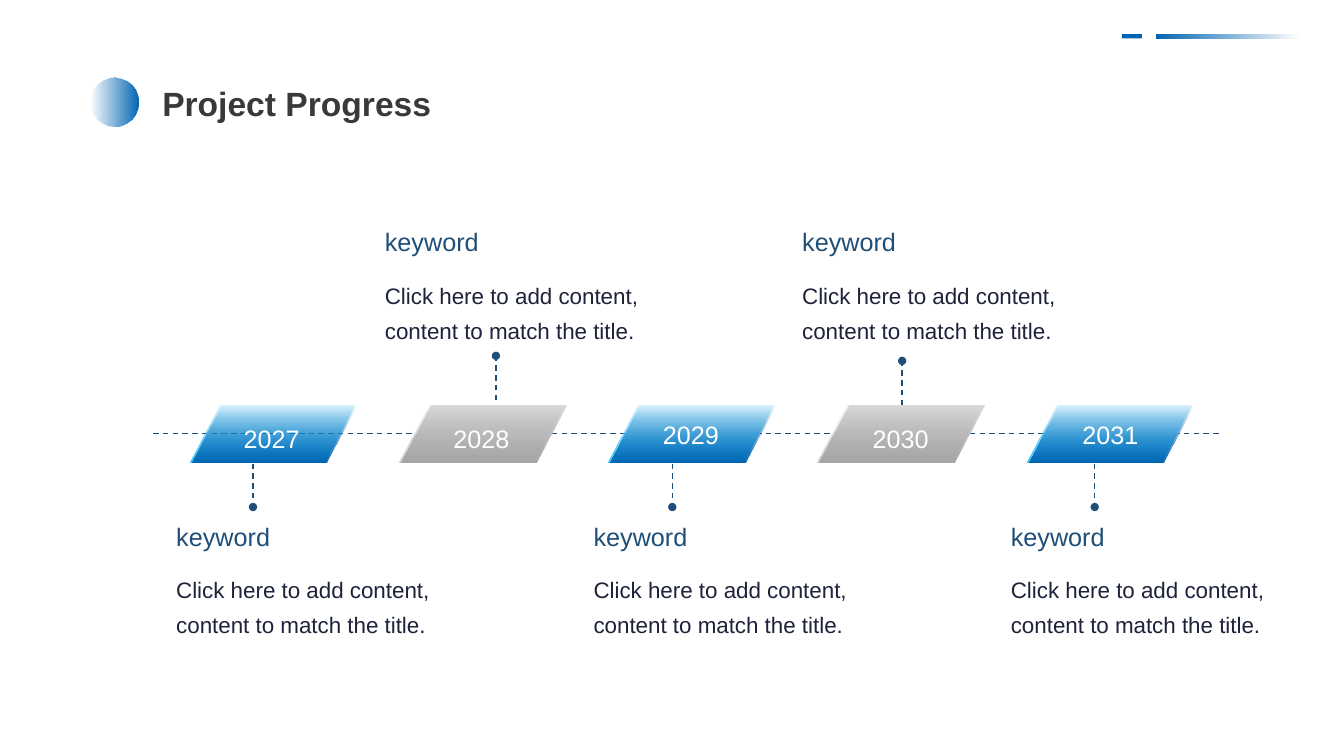
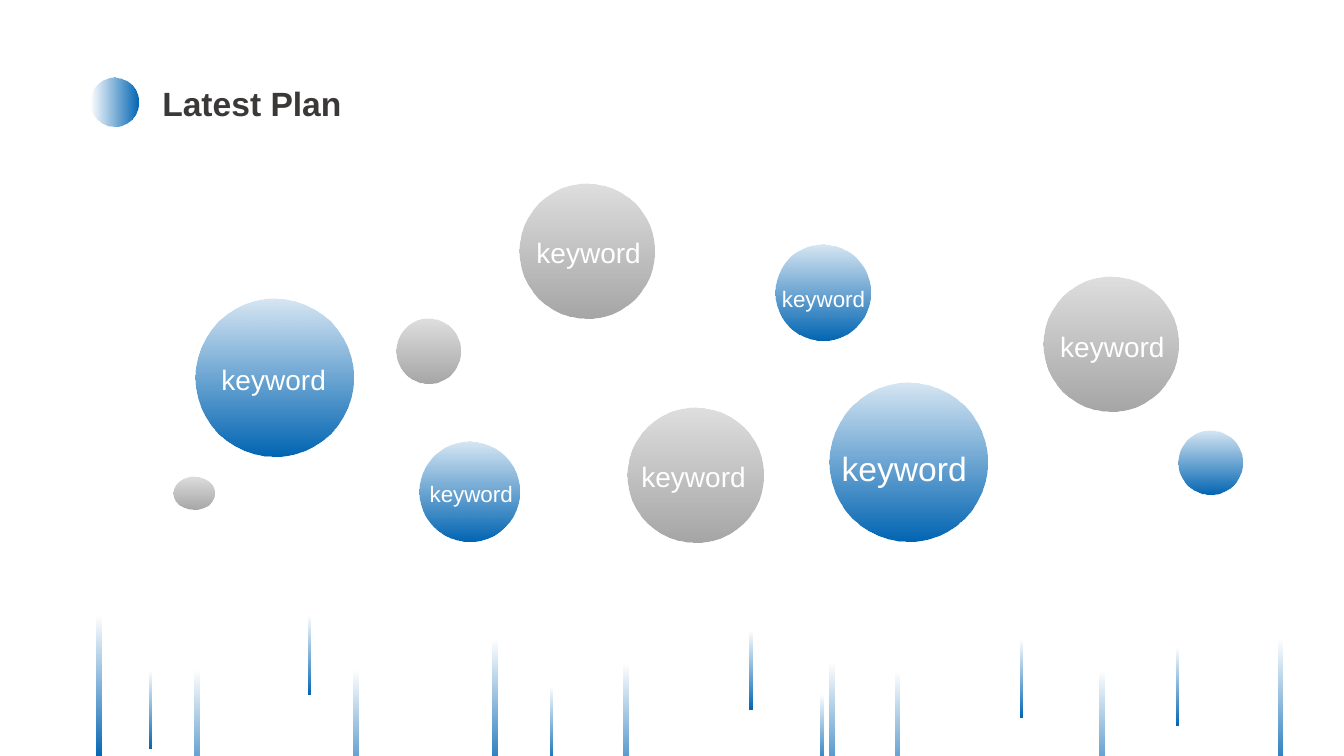
"""Build a timeline slide and a bubble slide on a fine square grid."""
from dataclasses import dataclass

from pptx import Presentation
from pptx.dml.color import RGBColor
from pptx.enum.dml import MSO_LINE
from pptx.enum.shapes import MSO_CONNECTOR as Connector, MSO_SHAPE as Preset
from pptx.enum.text import MSO_ANCHOR as Anchor, MSO_AUTO_SIZE as AutoSize, PP_ALIGN as Align
from pptx.oxml.ns import qn
from pptx.oxml.xmlchemy import OxmlElement
from pptx.util import Inches, Pt

COLUMNS, ROWS = 133.33, 75
CELL = Inches(0.1)
DOWN, RIGHT, LEFT = 270, 0, 180


@dataclass(frozen=True)
class Blend:
    """A fill that runs from a start colour of given opacity to an opaque end."""
    start: str
    end: str
    opacity: int = 100


@dataclass(frozen=True)
class Theme:
    """The colours, fills and type sizes of both slides."""
    font: str = "Arial"
    title: str = "3B3838"
    accent: str = "1F4E79"
    body: str = "1E223B"
    white: str = "FFFFFF"
    title_size: int = 24
    keyword_size: int = 18
    body_size: int = 16
    line_spacing: float = 1.3
    solid_white: Blend = Blend("FFFFFF", "FFFFFF")
    solid_blue: Blend = Blend("0065B3", "0065B3")
    fade: Blend = Blend("0065B3", "0065B3", 0)
    blue: Blend = Blend("0065B3", "0065B3", 16)
    grey: Blend = Blend("A6A6A6", "A6A6A6", 36)
    blue_edge: Blend = Blend("26B9F5", "2BC5FF", 16)
    grey_edge: Blend = Blend("D0CECE", "D0CECE", 14)


THEME = Theme()

KEYWORD = "keyword"
CAPTION = "Click here to add content, content to match the title."
TILE_TOP, TILE_WIDTH, TILE_HEIGHT = 40.2, 16.4, 5.7
CAPTION_STEP, TILE_STEP, YEAR_STEP = 20.7, 20.75, 20.8

MILESTONES = [
    ("2027", 40.6, 25.1, 46, 50.3),
    ("2028", 40.6, 49.2, 39.7, 35.3),
    ("2029", 40.2, 66.7, 46, 50.3),
    ("2030", 40.6, 89.5, 40.2, 35.8),
    ("2031", 40.2, 108.6, 46, 50.3),
]

BUBBLES = [
    (82.3, 38, 15.7, 15.7, THEME.blue),
    (19.4, 29.6, 15.7, 15.7, THEME.blue),
    (62.3, 40.4, 13.4, 13.4, THEME.grey),
    (51.5, 18.2, 13.4, 13.4, THEME.grey),
    (103.5, 27.4, 13.4, 13.4, THEME.grey),
    (76.9, 24.3, 9.5, 9.5, THEME.blue),
    (41.6, 43.8, 9.9, 9.9, THEME.blue),
    (39.3, 31.6, 6.4, 6.4, THEME.grey),
    (17.2, 47.3, 4.1, 3.3, THEME.grey),
    (116.9, 42.7, 6.4, 6.4, THEME.blue),
]

BUBBLE_LABELS = [
    (20.9, 34.5, 12.5, 20),
    (51.9, 21.9, 13, 20),
    (82.1, 42.7, 15.2, 24),
    (62.4, 44.1, 12.8, 20),
    (76.5, 27, 10.4, 16),
    (103.9, 31.2, 12.9, 20),
    (41.5, 46.3, 10.5, 16),
]

LONG_STREAKS = [
    (9.6, 61.1), (19.3, 66.5), (35.1, 66.5), (48.9, 63.4), (61.9, 65.8),
    (82.3, 65.7), (88.8, 66.6), (109.1, 66.5), (126.8, 63.4),
]
SHORT_STREAKS = [
    (14.8, 66.5), (30.6, 61.1), (54.6, 68.1), (74.4, 62.6),
    (81.4, 68.9), (101.2, 63.4), (116.7, 64.2),
]


def cells(*counts):
    """Turn counts of columns or rows into slide lengths."""
    return [round(count * CELL) for count in counts]


def paint(shape, blend, angle):
    """Fill a shape with a blend and drop its outline and shadow."""
    shape.shadow.inherit = False
    shape.line.fill.background()
    if blend.opacity == 100:
        shape.fill.solid()
        shape.fill.fore_color.rgb = RGBColor.from_string(blend.end)
        return
    shape.fill.gradient()
    shape.fill.gradient_angle = angle
    for stop, color in zip(shape.fill.gradient_stops, (blend.start, blend.end)):
        stop.color.rgb = RGBColor.from_string(color)
    alpha = OxmlElement("a:alpha")
    alpha.set("val", str(blend.opacity * 1000))
    next(shape._element.spPr.iter(qn("a:srgbClr"))).append(alpha)


def add_filled(slide, preset, box, blend, angle=DOWN):
    """Add a preset shape on the grid and paint it."""
    shape = slide.shapes.add_shape(preset, *cells(*box))
    paint(shape, blend, angle)
    return shape


def write(shape, text, size, color, align=Align.LEFT, spacing=1.0, bold=False):
    """Put one formatted paragraph in a shape."""
    frame = shape.text_frame
    frame.text = text
    frame.word_wrap = True
    frame.auto_size = AutoSize.NONE
    frame.vertical_anchor = Anchor.TOP
    paragraph = frame.paragraphs[0]
    paragraph.alignment = align
    paragraph.line_spacing = spacing
    font = paragraph.runs[0].font
    font.name, font.size, font.bold = THEME.font, Pt(size), bold
    font.color.rgb = RGBColor.from_string(color)


def add_label(slide, left, top, width, text, size, color, align=Align.LEFT, lines=1):
    """Add a text box as tall as its lines of text."""
    height = 0.9 + 0.2 * size * lines
    box = slide.shapes.add_textbox(*cells(left, top, width, height))
    write(box, text, size, color, align, THEME.line_spacing)


def add_dashed_line(slide, start, end, dot=False):
    """Add a dashed line, with a dot at its end if wanted."""
    line = slide.shapes.add_connector(Connector.STRAIGHT, *cells(*start, *end))
    line.line.color.rgb = RGBColor.from_string(THEME.accent)
    line.line.width = Pt(1)
    line.line.dash_style = MSO_LINE.DASH
    if dot:
        tail = OxmlElement("a:tailEnd")
        tail.set("type", "oval")
        line.line._get_or_add_ln().append(tail)
    line._element.spPr.append(OxmlElement("a:effectLst"))


def add_titled_slide(presentation, title):
    """Add a slide with the shared title and its round marker."""
    slide = presentation.slides.add_slide(presentation.slide_layouts[5])
    placeholder = slide.shapes.title
    placeholder.left, placeholder.top, placeholder.width, placeholder.height = cells(15.1, 7.7, 30, 5)
    write(placeholder, title, THEME.title_size, THEME.title, bold=True)
    add_filled(slide, Preset.FLOWCHART_CONNECTOR, (9, 7.7, 4.7, 4.8), THEME.fade, RIGHT)
    return slide


def add_tile(slide, left, edge, face, backed):
    """Add a slanted tile with a bright edge and an optional white backing."""
    layers = [(left - 0.2, edge), (left, face)]
    if backed:
        layers.insert(0, (left, THEME.solid_white))
    for layer_left, blend in layers:
        box = (layer_left, TILE_TOP, TILE_WIDTH, TILE_HEIGHT)
        tile = add_filled(slide, Preset.PARALLELOGRAM, box, blend)
        tile.adjustments[0] = 0.53


def add_milestone(slide, index, milestone):
    """Add one year with its tile, stem and caption."""
    year, year_top, stem, stem_start, stem_end = milestone
    above = index % 2 == 1
    edge, face = (THEME.grey_edge, THEME.grey) if above else (THEME.blue_edge, THEME.fade)
    add_tile(slide, 19 + index * TILE_STEP, edge, face, backed=index > 0)
    add_label(slide, 19.9 + index * YEAR_STEP, year_top, 14.1, year,
              THEME.keyword_size, THEME.white, Align.CENTER)
    add_dashed_line(slide, (stem, stem_start), (stem, stem_end), dot=True)
    left, top = 16.5 + index * CAPTION_STEP, 21.1 if above else 50.3
    add_label(slide, left, top, 14.1, KEYWORD, THEME.keyword_size, THEME.accent)
    add_label(slide, left, top + 5.6, 27.3, CAPTION, THEME.body_size, THEME.body, lines=2)


def build_progress(presentation):
    """Build the timeline slide."""
    slide = add_titled_slide(presentation, "Project Progress")
    add_filled(slide, Preset.RECTANGLE, (111.3, 3.4, 2, 0.4), THEME.solid_blue)
    add_filled(slide, Preset.RECTANGLE, (114.7, 3.4, 14.1, 0.45), THEME.fade, LEFT)
    add_dashed_line(slide, (15.2, 43), (121.2, 43))
    for index, milestone in enumerate(MILESTONES):
        add_milestone(slide, index, milestone)


def build_plan(presentation):
    """Build the bubble slide."""
    slide = add_titled_slide(presentation, "Latest Plan")
    for streaks, width, height in ((LONG_STREAKS, 0.45, 14.1), (SHORT_STREAKS, 0.25, 7.8)):
        for left, top in streaks:
            add_filled(slide, Preset.RECTANGLE, (left, top, width, height), THEME.fade)
    for *box, blend in BUBBLES:
        add_filled(slide, Preset.OVAL, box, blend)
    for left, top, width, size in BUBBLE_LABELS:
        add_label(slide, left, top, width, KEYWORD, size, THEME.white, Align.CENTER)


def main():
    """Build and save the presentation."""
    presentation = Presentation()
    presentation.slide_width, presentation.slide_height = cells(COLUMNS, ROWS)
    build_progress(presentation)
    build_plan(presentation)
    presentation.save("out.pptx")


if __name__ == "__main__":
    main()
